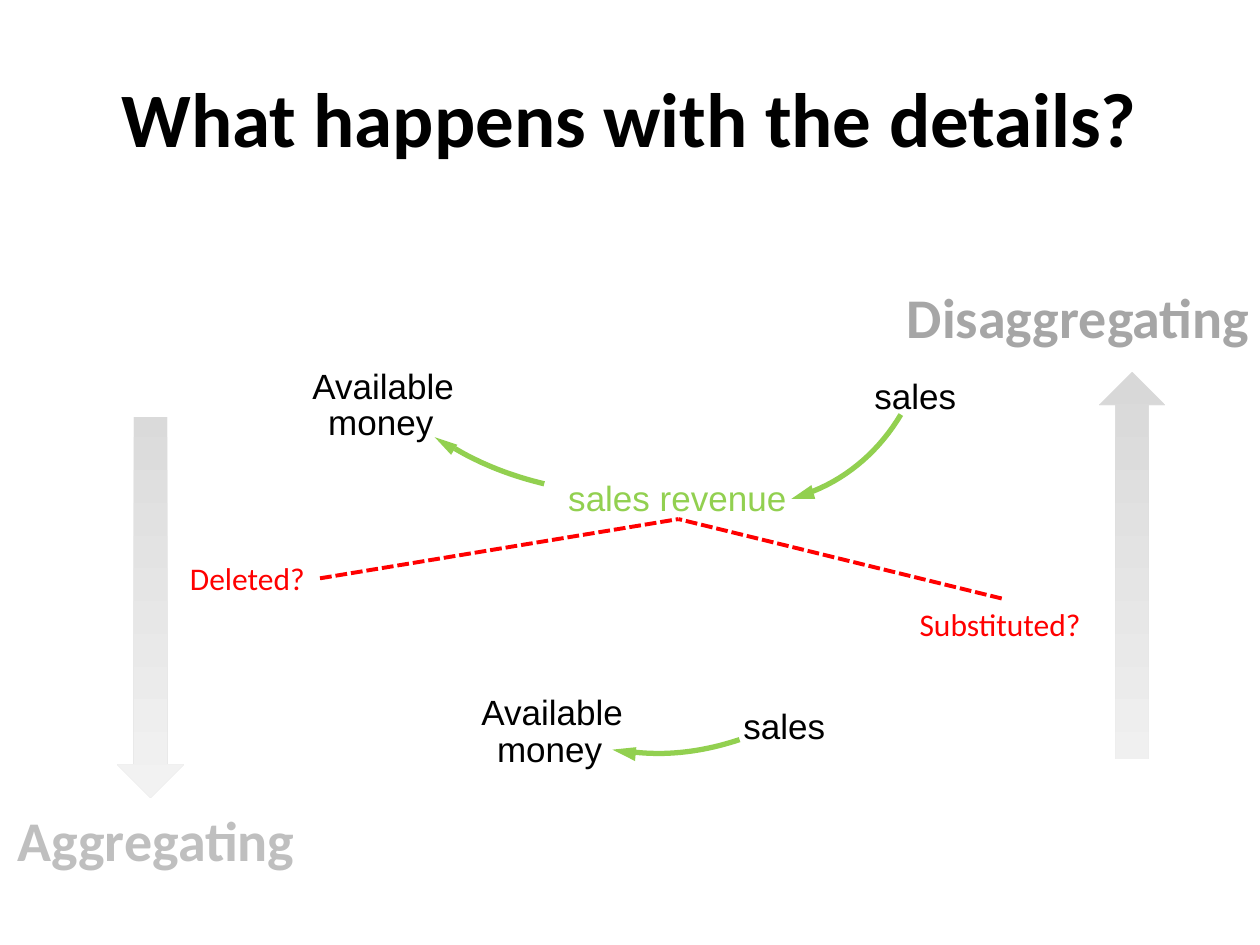
import pptx
import pptx.dml.color
import pptx.enum.dml
import pptx.enum.shapes
import pptx.enum.text
import pptx.util
from lxml import etree

SLIDE_WIDTH, SLIDE_HEIGHT = pptx.util.Inches(10), pptx.util.Inches(7.5)
COLUMN, ROW = SLIDE_WIDTH / 100, SLIDE_HEIGHT / 75
GREEN, RED, BLACK, WHITE = "92D050", "FF0000", "000000", "FFFFFF"
CURVE_STEPS = 16


def color(hex_value):
    """Turn a hex string into a colour."""
    return pptx.dml.color.RGBColor.from_string(hex_value)


def place(origin, column, row):
    """Give the slide position of a grid point counted from an origin."""
    return round((origin[0] + column) * COLUMN), round((origin[1] + row) * ROW)


def frame(origin, box):
    """Give left, top, width and height of a grid box counted from an origin."""
    return *place(origin, *box[:2]), *place((0, 0), *box[2:])


def add_text(slide, origin, box, text, size, hex_value, font="Calibri", bold=False, inset=True):
    """Add one line of text that does not wrap."""
    label = slide.shapes.add_textbox(*frame(origin, box))
    body = label.text_frame
    body.word_wrap = False
    body.auto_size = pptx.enum.text.MSO_AUTO_SIZE.SHAPE_TO_FIT_TEXT
    if not inset:
        body.margin_left = body.margin_top = body.margin_right = body.margin_bottom = 0
    paragraph = body.paragraphs[0]
    paragraph.text = text
    paragraph.font.name = font
    paragraph.font.size = pptx.util.Pt(size)
    paragraph.font.bold = bold
    paragraph.font.color.rgb = color(hex_value)
    return label


def add_variable(slide, origin, box, text, hex_value=BLACK):
    """Add the name of a variable in the causal diagram."""
    return add_text(slide, origin, box, text, 20, hex_value, font="Arial", inset=False)


def add_title(slide, box, text):
    """Add the centred slide title."""
    title = add_text(slide, (0, 0), box, text, 44, BLACK, bold=True)
    body = title.text_frame
    body.auto_size = pptx.enum.text.MSO_AUTO_SIZE.NONE
    body.word_wrap = True
    body.vertical_anchor = pptx.enum.text.MSO_ANCHOR.MIDDLE
    body.paragraphs[0].alignment = pptx.enum.text.PP_ALIGN.CENTER


def add_outline(slide, origin, points, close):
    """Add a green outline through grid points."""
    start, *rest = [place(origin, *point) for point in points]
    builder = slide.shapes.build_freeform(*start)
    builder.add_line_segments(rest, close=close)
    outline = builder.convert_to_shape()
    outline.shadow.inherit = False
    return outline


def bezier(controls, t):
    """Give the point at share t of a cubic curve."""
    weights = ((1 - t) ** 3, 3 * t * (1 - t) ** 2, 3 * t ** 2 * (1 - t), t ** 3)
    return tuple(sum(w * point[axis] for w, point in zip(weights, controls)) for axis in (0, 1))


def add_influence(slide, origin, controls, head):
    """Add a curved causal arrow with its head."""
    points = [bezier(controls, step / CURVE_STEPS) for step in range(CURVE_STEPS + 1)]
    stem = add_outline(slide, origin, points, close=False)
    stem.fill.background()
    stem.line.color.rgb = color(GREEN)
    stem.line.width = pptx.util.Pt(3)
    tip = add_outline(slide, origin, head, close=True)
    tip.fill.solid()
    tip.fill.fore_color.rgb = color(GREEN)
    tip.line.fill.background()


def add_available_money(slide, origin):
    """Add the two-line variable at the corner of a diagram."""
    add_variable(slide, origin, (0, 0, 11.4, 3.4), "Available")
    add_variable(slide, origin, (1.25, 2.9, 8.4, 3.4), "money")


def add_detailed_diagram(slide, origin):
    """Add the diagram with the middle variable and return that variable."""
    add_available_money(slide, origin)
    add_variable(slide, origin, (44.6, 0.8, 6.6, 3.4), "sales")
    revenue = add_variable(slide, origin, (20.3, 8.9, 17.5, 3.4), "sales revenue", GREEN)
    add_influence(slide, origin, [(46.7, 4), (45.1, 6.7), (42.7, 8.9), (39.7, 10.1)],
                  [(38, 10.7), (39.9, 10.7), (39.6, 9.6)])
    add_influence(slide, origin, [(18.4, 9.5), (15.9, 8.9), (13.5, 8), (11.3, 6.7)],
                  [(9.7, 5.8), (11, 7.2), (11.5, 6.4)])
    return revenue


def add_aggregate_diagram(slide, origin):
    """Add the diagram without the middle variable."""
    add_available_money(slide, origin)
    add_variable(slide, origin, (20.8, 1.1, 6.6, 3.4), "sales")
    add_influence(slide, origin, [(20.5, 3.9), (17.8, 4.8), (15, 5.2), (12.2, 4.9)],
                  [(10.4, 4.7), (12.2, 5.6), (12.3, 4.5)])


def add_question(slide, box, text, side, revenue):
    """Add a red question tied by a dashed line to the middle variable."""
    question = add_text(slide, (0, 0), box, text, 18, RED)
    tie = slide.shapes.add_connector(pptx.enum.shapes.MSO_CONNECTOR.STRAIGHT, 0, 0, 0, 0)
    tie.begin_connect(question, side)
    tie.end_connect(revenue, 2)
    tie.line.color.rgb = color(RED)
    tie.line.width = pptx.util.Pt(2.25)
    tie.line.dash_style = pptx.enum.dml.MSO_LINE.SQUARE_DOT
    etree.SubElement(tie.element.spPr, pptx.oxml.ns.qn("a:effectLst"))


def add_direction(slide, origin, heading, heading_box, hex_value, cover_box):
    """Add a faded arrow with its heading and a cover over its unused head."""
    add_text(slide, origin, heading_box, heading, 32, hex_value, bold=True)
    arrow = slide.shapes.add_shape(pptx.enum.shapes.MSO_SHAPE.UP_DOWN_ARROW,
                                   *frame(origin, (0, 0, 5.3, 33.8)))
    arrow.shadow.inherit = False
    arrow.line.fill.background()
    arrow.fill.gradient()
    arrow.fill.gradient_angle = 270
    for stop, shade in zip(arrow.fill.gradient_stops, ("D8D8D8", "F2F2F2")):
        stop.color.rgb = color(shade)
    cover = slide.shapes.add_shape(pptx.enum.shapes.MSO_SHAPE.RECTANGLE, *frame(origin, cover_box))
    cover.shadow.inherit = False
    cover.fill.solid()
    cover.fill.fore_color.rgb = color(WHITE)
    cover.line.color.rgb = color(WHITE)
    cover.line.width = pptx.util.Pt(2)


def main():
    """Build the slide and save it."""
    deck = pptx.Presentation()
    deck.slide_width, deck.slide_height = SLIDE_WIDTH, SLIDE_HEIGHT
    slide = deck.slides.add_slide(deck.slide_layouts[6])
    add_title(slide, (5, 3, 90, 12.5), "What happens with the details?")
    revenue = add_detailed_diagram(slide, (24.8, 28.9))
    add_aggregate_diagram(slide, (38.2, 54.8))
    add_direction(slide, (87.2, 29.5), "Disaggregating", (-16.2, -7.6, 29.4, 6.4), "A6A6A6",
                  (-3.9, 30.9, 9.6, 6.3))
    add_direction(slide, (9.3, 29.5), "Aggregating", (-8.9, 33.9, 24.2, 6.4), "BFBFBF",
                  (-1.3, -2.8, 9.6, 6.3))
    add_question(slide, (14.1, 43.9, 11.3, 4), "Deleted?", 3, revenue)
    add_question(slide, (72, 47.5, 15, 4), "Substituted?", 0, revenue)
    deck.save("out.pptx")


if __name__ == "__main__":
    main()
